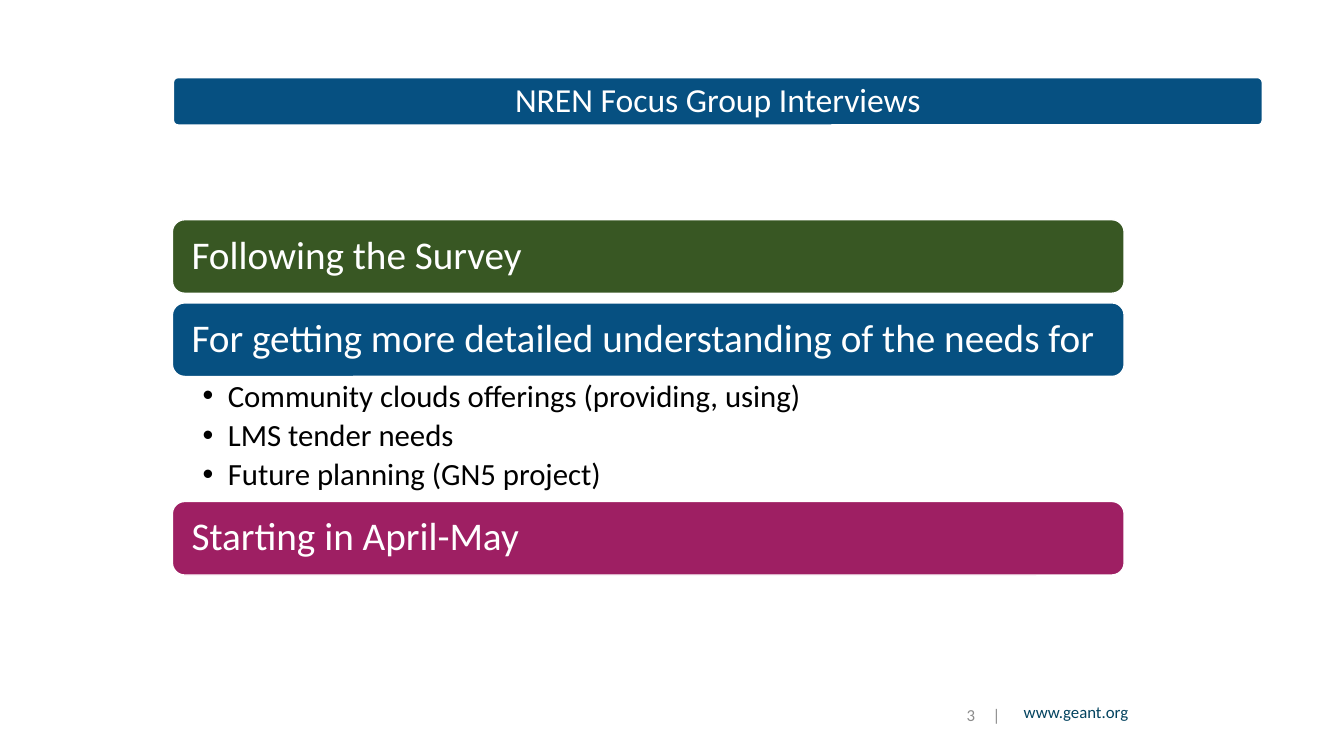
from dataclasses import dataclass

from pptx import Presentation
from pptx.dml.color import RGBColor
from pptx.enum.shapes import MSO_SHAPE
from pptx.enum.text import MSO_ANCHOR, MSO_AUTO_SIZE, PP_ALIGN
from pptx.util import Inches, Pt

SLIDE_WIDTH = Inches(13.33)
SLIDE_HEIGHT = Inches(7.5)
COLUMN = SLIDE_WIDTH / 133.3
ROW = SLIDE_HEIGHT / 75

FONT = "Calibri"
WHITE = "FFFFFF"
BLACK = "000000"
BLUE = "065081"

LIST_LEFT = 17.1
LIST_TOP = 21.8
LIST_WIDTH = 94.4
BAR_HEIGHT = 7.3
BAR_GAP = 0.95
BULLETS_HEIGHT = 12.4


@dataclass
class Frame:
    """A rectangle in grid columns and rows."""
    left: float
    top: float
    width: float
    height: float


@dataclass
class TextStyle:
    """The look of all text in a box, with its margins in grid columns."""
    size: float
    color: str
    align: PP_ALIGN = PP_ALIGN.LEFT
    anchor: MSO_ANCHOR = MSO_ANCHOR.MIDDLE
    side_margin: float = 1
    edge_margin: float = 0.5
    line_spacing: float = 1
    space_after: float = 0


@dataclass
class Section:
    """A coloured bar with the bullets below it."""
    heading: str
    fill: str
    bullets: tuple[str, ...] = ()


@dataclass
class Label:
    """A line of footer text."""
    text: str
    frame: Frame
    style: TextStyle


TITLE_STYLE = TextStyle(24, WHITE, PP_ALIGN.CENTER, line_spacing=0.9)
BAR_STYLE = TextStyle(28, WHITE, side_margin=1.55, line_spacing=0.9)
BULLET_STYLE = TextStyle(22, BLACK, anchor=MSO_ANCHOR.TOP, side_margin=3,
                         edge_margin=0.4, line_spacing=0.9, space_after=4.4)
NUMBER_STYLE = TextStyle(12, "8C8C8C", PP_ALIGN.RIGHT)
ADDRESS_STYLE = TextStyle(12, "03435F", PP_ALIGN.RIGHT, MSO_ANCHOR.TOP)

SECTIONS = (
    Section("Following the Survey", "385723"),
    Section("For getting more detailed understanding of the needs for", BLUE,
            ("Community clouds offerings (providing, using)",
             "LMS tender needs",
             "Future planning (GN5 project)")),
    Section("Starting in April-May", "9E1F63"),
)

LABELS = (
    Label("3", Frame(92.9, 69.1, 4.8, 3.6), NUMBER_STYLE),
    Label("|", Frame(97, 69.1, 3.2, 3.6), NUMBER_STYLE),
    Label("www.geant.org", Frame(96.1, 69.1, 16.8, 3.6), ADDRESS_STYLE),
)


def rgb(color: str) -> RGBColor:
    """Turn a hex string into a colour."""
    return RGBColor.from_string(color)


def place(frame: Frame) -> tuple[int, int, int, int]:
    """Turn grid units into slide lengths."""
    return (round(frame.left * COLUMN), round(frame.top * ROW),
            round(frame.width * COLUMN), round(frame.height * ROW))


def move(box, frame: Frame) -> None:
    """Set the position and size of a box."""
    box.left, box.top, box.width, box.height = place(frame)


def write(box, text: str, style: TextStyle) -> None:
    """Fill a box with text and format its runs."""
    body = box.text_frame
    body.text = text
    body.word_wrap = True
    body.auto_size = MSO_AUTO_SIZE.NONE
    body.vertical_anchor = style.anchor
    body.margin_left = body.margin_right = round(style.side_margin * COLUMN)
    body.margin_top = body.margin_bottom = round(style.edge_margin * ROW)
    for para in body.paragraphs:
        para.alignment = style.align
        para.line_spacing = style.line_spacing
        para.space_before = Pt(0)
        para.space_after = Pt(style.space_after)
        for span in para.runs:
            span.font.name = FONT
            span.font.size = Pt(style.size)
            span.font.color.rgb = rgb(style.color)


def add_bar(page, frame: Frame, fill: str):
    """Draw a rounded bar with a white outline."""
    bar = page.shapes.add_shape(MSO_SHAPE.ROUNDED_RECTANGLE, *place(frame))
    bar.shadow.inherit = False
    bar.fill.solid()
    bar.fill.fore_color.rgb = rgb(fill)
    bar.line.color.rgb = rgb(WHITE)
    bar.line.width = Pt(1)
    return bar


def write_title(page) -> None:
    """Draw the title banner and bring the title in front of it."""
    frame = Frame(17.2, 7.7, 108, 4.7)
    banner = add_bar(page, frame, BLUE)
    banner.adjustments[0] = 0.1
    title = page.shapes.title
    move(title, frame)
    write(title, "NREN Focus Group Interviews", TITLE_STYLE)
    banner.element.addnext(title.element)


def write_bullets(box, frame: Frame, bullets: tuple[str, ...]) -> None:
    """Fill the body placeholder with a hanging bullet list."""
    move(box, frame)
    write(box, "\n".join(bullets), BULLET_STYLE)
    indent = Inches(0.25)
    for para in box.text_frame.paragraphs:
        properties = para._p.get_or_add_pPr()
        properties.set("marL", str(indent))
        properties.set("indent", str(-indent))


def write_sections(page) -> None:
    """Stack the bars and the bullets from top to bottom."""
    top = LIST_TOP
    for section in SECTIONS:
        bar = add_bar(page, Frame(LIST_LEFT, top, LIST_WIDTH, BAR_HEIGHT),
                      section.fill)
        write(bar, section.heading, BAR_STYLE)
        top += BAR_HEIGHT
        if section.bullets:
            frame = Frame(LIST_LEFT, top, LIST_WIDTH, BULLETS_HEIGHT)
            write_bullets(page.placeholders[1], frame, section.bullets)
            top += BULLETS_HEIGHT
        else:
            top += BAR_GAP


def main() -> None:
    """Build the slide and save it."""
    deck = Presentation()
    deck.slide_width = SLIDE_WIDTH
    deck.slide_height = SLIDE_HEIGHT
    page = deck.slides.add_slide(deck.slide_layouts[1])
    write_title(page)
    write_sections(page)
    for label in LABELS:
        box = page.shapes.add_textbox(*place(label.frame))
        write(box, label.text, label.style)
    deck.save("out.pptx")


if __name__ == "__main__":
    main()
